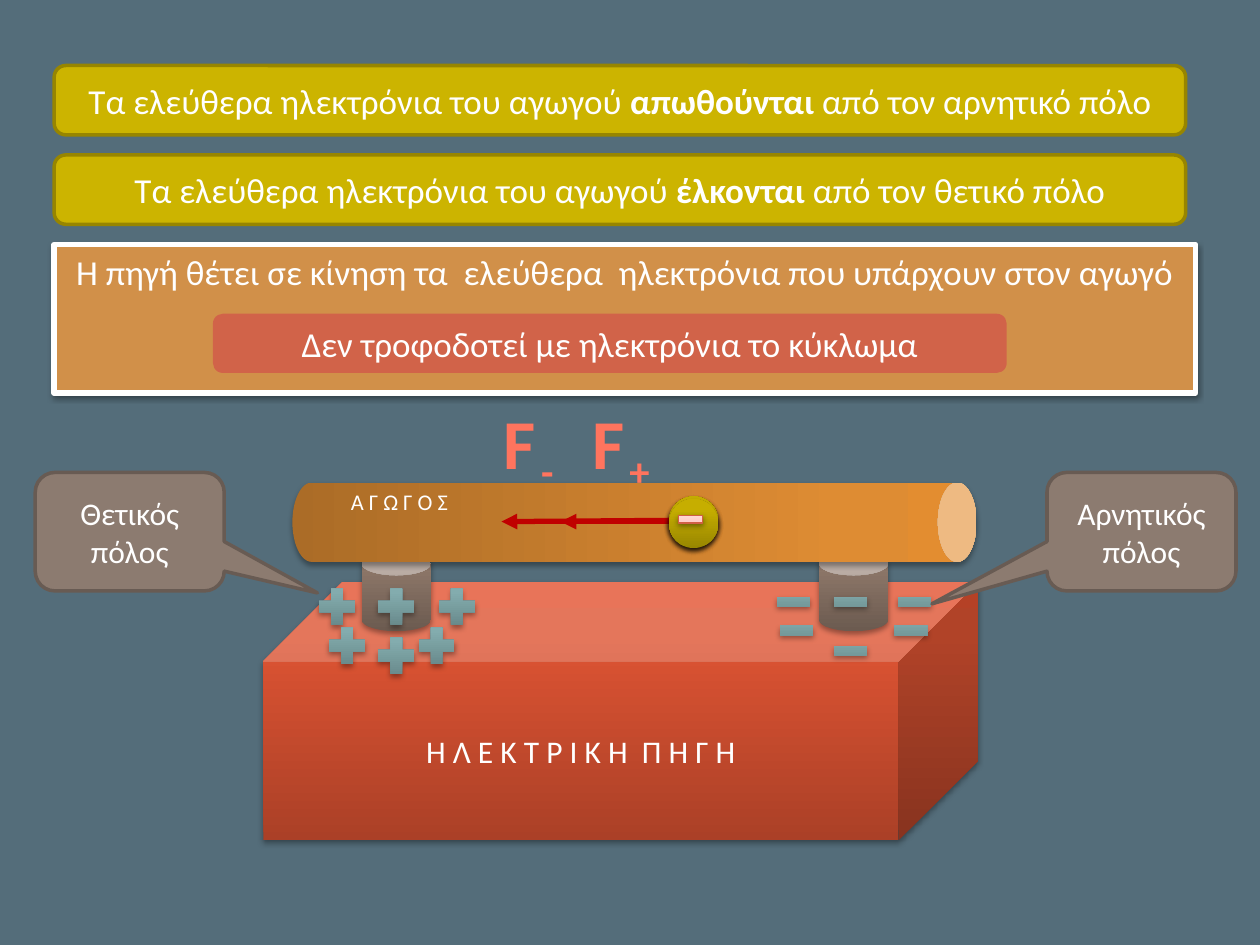
from lxml import etree
from pptx import Presentation
from pptx import util as u
from pptx.dml.color import RGBColor
from pptx.enum import shapes, text
from pptx.oxml import ns

SHAPE = shapes.MSO_SHAPE
ANCHOR = text.MSO_ANCHOR
RED = [(0, "AB4027"), (80, "DE5433"), (100, "E35230")]
BROWN = [(0, "6C5B50"), (80, "8C7668"), (100, "8D7768")]
TEAL = [(0, "658586"), (80, "83ACAE"), (100, "82AEAF")]
COPPER = [(0, "AB6C27"), (80, "DE8C33"), (100, "E38D30")]
GOLD = [(0, "988600"), (80, "C6AE00"), (100, "C7AF00")]
PINK = [(0, "FFB5AC"), (35, "FFCAC4"), (100, "FFEBE8")]
FORCE = [(10, "FF745E"), (75, "B43A1D")]
DEEP = (35, 3.1, 1.8)
SOFT = (38, 3.1, 1.6)


def paint(code):
    return RGBColor.from_string(code)


def add(parent, tag, **attrs):
    node = etree.SubElement(parent, ns.qn(tag))
    for key, val in attrs.items():
        node.set(key, str(val))
    return node


def blend(parent, stops, angle):
    grad = add(parent, "a:gradFill", rotWithShape=1)
    row = add(grad, "a:gsLst")
    for pos, code in stops:
        add(add(row, "a:gs", pos=pos * 1000), "a:srgbClr", val=code)
    add(grad, "a:lin", ang=angle * 60000, scaled=0)
    return grad


class Board:
    font = {"name": "Calibri", "bold": False}

    def __init__(self, deck, back):
        self.slide = deck.slides.add_slide(deck.slide_layouts[6])
        self.slide.background.fill.solid()
        self.slide.background.fill.fore_color.rgb = paint(back)
        self.home()

    def home(self):
        self.pen = self.slide.shapes

    def group(self):
        self.pen = self.slide.shapes.add_group_shape().shapes

    def shape(self, kind, at, fill, line=None, shade=None, adj=()):
        item = self.pen.add_shape(kind, *map(u.Inches, at))
        for i, val in enumerate(adj):
            item.adjustments[i] = val
        if isinstance(fill, str):
            item.fill.solid()
            item.fill.fore_color.rgb = paint(fill)
        else:
            item.fill.background()
            props = item.element.spPr
            props.replace(props.find(ns.qn("a:noFill")), blend(props, fill, 270))
        if line:
            item.line.color.rgb = paint(line[0])
            item.line.width = u.Pt(line[1])
        else:
            item.line.fill.background()
        item.shadow.inherit = False
        if shade:
            dark, blur, dist = shade
            glow = add(item.element.spPr.find(ns.qn("a:effectLst")), "a:outerShdw",
                       blurRad=u.Pt(blur), dist=u.Pt(dist), dir=5400000, rotWithShape=0)
            add(add(glow, "a:srgbClr", val="000000"), "a:alpha", val=dark * 1000)
        return item

    def label(self, item, parts, size, anchor=ANCHOR.MIDDLE):
        frame = item.text_frame
        frame.word_wrap = True
        frame.vertical_anchor = anchor
        para = frame.paragraphs[0]
        para.alignment = text.PP_ALIGN.CENTER
        for i, words in enumerate(parts):
            run = para.add_run()
            run.text = words
            look = {**self.font, "size": u.Pt(size), "bold": i == 1}
            for key, val in look.items():
                setattr(run.font, key, val)
            run.font.color.rgb = paint("FFFFFF")

    def arrow(self, start, end):
        item = self.pen.add_connector(shapes.MSO_CONNECTOR.STRAIGHT,
                                      *map(u.Inches, start + end))
        item.line.color.rgb = paint("C00000")
        item.line.width = u.Pt(3)
        props = item.element.spPr
        add(props.find(ns.qn("a:ln")), "a:tailEnd", type="triangle")
        add(props, "a:effectLst")

    def force(self, at, sign):
        frame = self.pen.add_textbox(*map(u.Inches, at)).text_frame
        frame.word_wrap = False
        frame.auto_size = text.MSO_AUTO_SIZE.SHAPE_TO_FIT_TEXT
        for words, base in (("F", 0), (sign, -25000)):
            run = frame.paragraphs[0].add_run()
            run.text = words
            props = run.font._element
            props.set("spc", "300")
            props.set("baseline", str(base))
            edge = add(props, "a:ln", w=u.Pt(0.9))
            add(add(edge, "a:solidFill"), "a:srgbClr", val="FBF5F4")
            blend(props, FORCE, 90)
            for key, val in {**self.font, "size": u.Pt(40), "bold": True}.items():
                setattr(run.font, key, val)

    def charge(self, top):
        self.group()
        self.shape(SHAPE.OVAL, (5.31, top, 0.39, 0.39), GOLD, shade=DEEP)
        self.shape(SHAPE.MATH_MINUS, (5.35, top + 0.03, 0.26, 0.26), PINK,
                   ("D05F44", 0.75), SOFT)
        self.home()


def main():
    deck = Presentation()
    deck.slide_width, deck.slide_height = u.Inches(10), u.Inches(7.5)
    board = Board(deck, "546D7A")

    board.group()
    source = board.shape(SHAPE.CUBE, (2.09, 4.62, 5.67, 2.05), RED, shade=DEEP, adj=[0.307])
    board.label(source, ["Η Λ Ε Κ Τ Ρ Ι Κ Η  Π Η Γ Η"], 18)
    for left in (6.5, 2.87):
        board.shape(SHAPE.CAN, (left, 4.38, 0.55, 0.63), BROWN, shade=DEEP, adj=[0.339])
    plus = [(3.43, 4.62), (3.27, 4.93), (2.95, 5.01), (2.48, 4.62), (2.95, 4.62), (2.56, 4.93)]
    minus = [(6.12, 4.62), (6.14, 4.85), (7.08, 4.62), (6.57, 5.01), (7.05, 4.85), (6.57, 4.62)]
    for kind, spots, size in ((SHAPE.MATH_PLUS, plus, (0.39, 0.39)),
                              (SHAPE.MATH_MINUS, minus, (0.36, 0.31))):
        for spot in spots:
            board.shape(kind, spot + size, TEAL, shade=DEEP)
    board.home()

    rod = board.shape(SHAPE.CAN, (4.72, 1.43, 0.63, 5.43), COPPER, shade=DEEP, adj=[0.487])
    rod.rotation = 90
    board.label(rod, ["α γ ω γ ο σ"], 16, ANCHOR.TOP)
    rod.text_frame.margin_left = 0
    body = rod.element.txBody.bodyPr
    body.set("vert", "vert270")
    body.set("numCol", "4")
    rod.text_frame.paragraphs[0].runs[0].font._element.set("cap", "small")

    board.charge(3.94)
    board.arrow((5.31, 4.13), (3.98, 4.14))
    board.arrow((5.31, 4.14), (4.45, 4.14))
    board.force((4.6, 3.12, 0.72, 0.77), "+")
    board.force((3.9, 3.12, 0.64, 0.77), "-")

    for left, words, adj in ((8.31, "Αρνητικός πόλος", [-1.109, 0.609, 0.167]),
                             (0.28, "Θετικός πόλος", [0.993, 0.517, 0.167])):
        pole = board.shape(SHAPE.ROUNDED_RECTANGULAR_CALLOUT, (left, 3.75, 1.5, 0.94),
                           "8C7B70", ("685B53", 2), adj=adj)
        board.label(pole, [words], 18)

    for top, verb, pole in ((0.52, "απωθούνται", "αρνητικό"), (1.23, "έλκονται", "θετικό")):
        bar = board.shape(SHAPE.ROUNDED_RECTANGLE, (0.43, top, 8.98, 0.55),
                          "CCB400", ("978500", 2))
        board.label(bar, ["Τα ελεύθερα ηλεκτρόνια του αγωγού ", verb,
                          f" από τον {pole} πόλο"], 20)

    panel = board.shape(SHAPE.RECTANGLE, (0.43, 1.94, 9.06, 1.18), "D19049",
                        ("FFFFFF", 3), SOFT)
    board.label(panel, ["Η πηγή θέτει σε κίνηση τα  ελεύθερα  ηλεκτρόνια "
                        "που υπάρχουν στον αγωγό"], 20, ANCHOR.TOP)
    note = board.shape(SHAPE.ROUNDED_RECTANGLE, (1.69, 2.49, 6.3, 0.47), "D16349")
    board.label(note, ["Δεν τροφοδοτεί με ηλεκτρόνια το κύκλωμα"], 20)

    for top in (3.95, 3.94, 3.94, 3.96):
        board.charge(top)
    deck.save("out.pptx")


if __name__ == "__main__":
    main()
